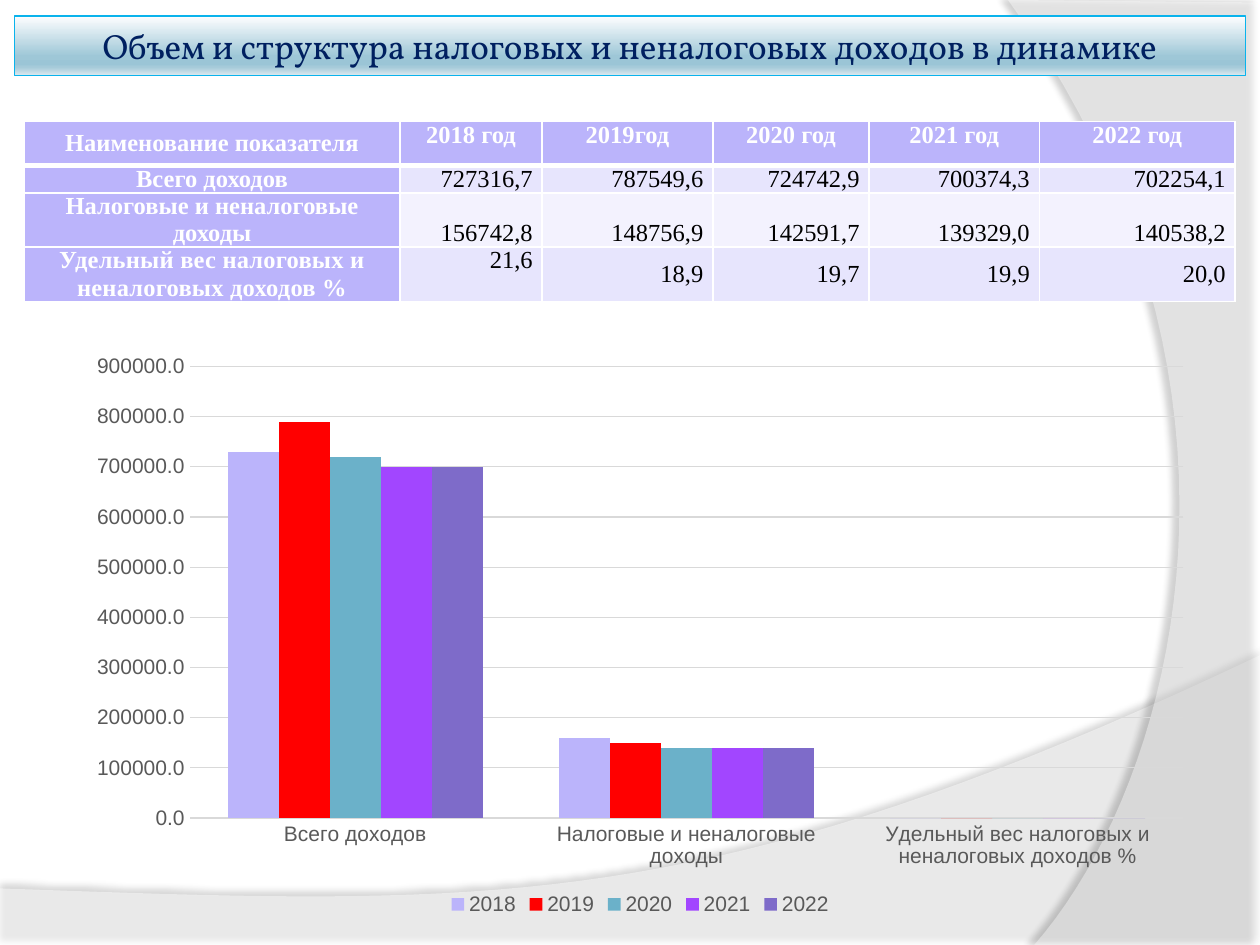
from dataclasses import dataclass

from lxml.etree import SubElement
from pptx import Presentation
from pptx.chart.data import CategoryChartData
from pptx.dml.color import RGBColor
from pptx.enum.chart import XL_CHART_TYPE, XL_LEGEND_POSITION, XL_TICK_MARK
from pptx.enum.text import MSO_ANCHOR, MSO_AUTO_SIZE, PP_ALIGN
from pptx.oxml.ns import qn
from pptx.util import Cm, Pt

COLORS = {
    "white": "FFFFFF", "black": "000000", "navy": "002060", "sky": "0AB3EC",
    "lilac": "BBB4FB", "band": "E7E5FD", "pale": "F3F2FE",
    "label": "595959", "grid": "D9D9D9",
}
TITLE_STOPS = [(0, "FEFEFF"), (68, "9EC7D7"), (81, "9BC5D6"), (86, "A5CAD9"), (100, "DAE8EE")]
SERIES_COLORS = ["BBB4FB", "FF0000", "6BB1C9", "A246FF", "7E6BC9"]
YEARS = ["2018", "2019", "2020", "2021", "2022"]
HEADERS = ["Наименование показателя", "2018 год", "2019год", "2020 год", "2021 год", "2022 год"]
COLUMN_WIDTHS = [7.57, 2.87, 3.44, 3.15, 3.43, 3.95]
ROW_HEIGHTS = [0.89, 0.53, 1.07, 1.08]

Point = tuple[float, float]


@dataclass
class Indicator:
    name: str
    values: list[float]
    fill: str
    first_anchor: MSO_ANCHOR
    anchor: MSO_ANCHOR
    spacing: float = 0


@dataclass
class Swoosh:
    corners: list[Point]
    controls: list[Point]
    opacity: int
    shadow_opacity: int
    shadow_distance: float
    shadow_angle: int


INDICATORS = [
    Indicator("Всего доходов", [727316.7, 787549.6, 724742.9, 700374.3, 702254.1],
              "band", MSO_ANCHOR.TOP, MSO_ANCHOR.MIDDLE),
    Indicator("Налоговые и неналоговые доходы", [156742.8, 148756.9, 142591.7, 139329.0, 140538.2],
              "pale", MSO_ANCHOR.BOTTOM, MSO_ANCHOR.BOTTOM),
    Indicator("Удельный вес налоговых и неналоговых доходов %", [21.6, 18.9, 19.7, 19.9, 20.0],
              "band", MSO_ANCHOR.TOP, MSO_ANCHOR.MIDDLE, 0.1),
]
SWOOSHES = [
    Swoosh([(0, 17.91), (0, 19.08), (25.4, 19.08), (25.4, 13.21)],
           [(14.2, 18.52), (9.93, 18.26), (0, 17.91)], 45, 35, 3.5, 270),
    Swoosh([(25.4, 0.05), (25.4, 19.05), (20.85, 19.05)],
           [(23.75, 15.72), (25.86, 7.62), (20.32, 0)], 40, 45, 4, 180),
]


def rgb(name: str) -> RGBColor:
    return RGBColor.from_string(COLORS.get(name, name))


def set_font(font, *, size: float, color: str, face: str, bold: bool = False) -> None:
    font.size, font.name, font.bold = Pt(size), face, bold
    font.color.rgb = rgb(color)


def write(frame, text: str, *, align: PP_ALIGN = PP_ALIGN.CENTER, size: float = 14,
          color: str = "white", face: str = "Times New Roman", bold: bool = False,
          spacing: float = 0) -> None:
    para = frame.paragraphs[0]
    para.alignment = align
    span = para.add_run()
    span.text = text
    set_font(span.font, size=size, color=color, face=face, bold=bold)
    if spacing:
        span._r.get_or_add_rPr().set("spc", str(round(spacing * 100)))


def curve(start: Point, controls: list[Point], steps: int = 40) -> list[Point]:
    points = [start, *controls]
    weights = [1, 3, 3, 1]
    return [
        tuple(sum(weight * (1 - t) ** (3 - i) * t ** i * point[axis]
                  for i, (weight, point) in enumerate(zip(weights, points)))
              for axis in (0, 1))
        for t in (step / steps for step in range(1, steps + 1))
    ]


def add_alpha(color, percent: int) -> None:
    SubElement(color, qn("a:alpha"), val=str(percent * 1000))


def draw_swoosh(page, swoosh: Swoosh) -> None:
    outline = swoosh.corners + curve(swoosh.corners[-1], swoosh.controls)
    points = [(Cm(x), Cm(y)) for x, y in outline]
    builder = page.shapes.build_freeform(*points[0])
    builder.add_line_segments(points[1:], close=True)
    shape = builder.convert_to_shape()
    shape.fill.solid()
    shape.fill.fore_color.rgb = rgb("white")
    shape.line.fill.background()
    shape.shadow.inherit = False
    properties = shape.element.spPr
    add_alpha(properties.find(qn("a:solidFill")).find(qn("a:srgbClr")), swoosh.opacity)
    shadow = SubElement(properties.find(qn("a:effectLst")), qn("a:outerShdw"),
                        blurRad=str(Pt(4)), dist=str(Pt(swoosh.shadow_distance)),
                        dir=str(swoosh.shadow_angle * 60000), rotWithShape="0")
    add_alpha(SubElement(shadow, qn("a:srgbClr"), val=COLORS["black"]), swoosh.shadow_opacity)


def draw_title(page) -> None:
    title = page.shapes.title
    title.left, title.top, title.width, title.height = Cm(0.29), Cm(0.32), Cm(24.82), Cm(1.2)
    title.fill.gradient()
    title.fill.gradient_angle = 270
    stops = title.element.spPr.find(qn("a:gradFill")).find(qn("a:gsLst"))
    for stop in list(stops):
        stops.remove(stop)
    for position, color in TITLE_STOPS:
        stop = SubElement(stops, qn("a:gs"), pos=str(position * 1000))
        SubElement(stop, qn("a:srgbClr"), val=color)
    title.line.color.rgb = rgb("sky")
    title.line.width = Pt(0.75)
    frame = title.text_frame
    frame.word_wrap = True
    frame.auto_size = MSO_AUTO_SIZE.NONE
    frame.vertical_anchor = MSO_ANCHOR.MIDDLE
    write(frame, "Объем и структура налоговых и неналоговых доходов в динамике",
          size=20, color="navy", face="Vollkorn")
    title.element.getparent().append(title.element)


def fill_cell(cell, text: str, *, fill: str, anchor: MSO_ANCHOR = MSO_ANCHOR.MIDDLE,
              top: float = 1, bottom: float = 1, **text_format) -> None:
    cell.margin_left = cell.margin_right = Cm(0.19)
    cell.margin_top = cell.margin_bottom = 0
    cell.vertical_anchor = anchor
    properties = cell._tc.get_or_add_tcPr()
    for side, width in (("L", 1), ("R", 1), ("T", top), ("B", bottom)):
        border = SubElement(properties, qn(f"a:ln{side}"), w=str(Pt(width)))
        SubElement(SubElement(border, qn("a:solidFill")), qn("a:srgbClr"), val=COLORS["white"])
    cell.fill.solid()
    cell.fill.fore_color.rgb = rgb(fill)
    write(cell.text_frame, text, **text_format)


def draw_table(page) -> None:
    table = page.shapes.add_table(len(ROW_HEIGHTS), len(COLUMN_WIDTHS), Cm(0.49), Cm(2.45),
                                  Cm(sum(COLUMN_WIDTHS)), Cm(sum(ROW_HEIGHTS))).table
    for column, width in zip(table.columns, COLUMN_WIDTHS):
        column.width = Cm(width)
    for row, height in zip(table.rows, ROW_HEIGHTS):
        row.height = Cm(height)
    for index, header in enumerate(HEADERS):
        fill_cell(table.cell(0, index), header, fill="lilac", bottom=3, bold=True,
                  anchor=MSO_ANCHOR.TOP if index else MSO_ANCHOR.MIDDLE)
    for row, indicator in enumerate(INDICATORS, 1):
        top = 3 if row == 1 else 1
        fill_cell(table.cell(row, 0), indicator.name, fill="lilac", top=top, bold=True,
                  spacing=indicator.spacing)
        for column, value in enumerate(indicator.values, 1):
            fill_cell(table.cell(row, column), f"{value:.1f}".replace(".", ","),
                      fill=indicator.fill, top=top, align=PP_ALIGN.RIGHT, color="black",
                      anchor=indicator.first_anchor if column == 1 else indicator.anchor)


def draw_chart(page) -> None:
    data = CategoryChartData(number_format="0.0")
    data.categories = [indicator.name for indicator in INDICATORS]
    for index, year in enumerate(YEARS):
        data.add_series(year, [round(indicator.values[index], -4) for indicator in INDICATORS])
    chart = page.shapes.add_chart(XL_CHART_TYPE.COLUMN_CLUSTERED, Cm(1.5), Cm(6.93),
                                  Cm(22.81), Cm(11.63), data).chart
    chart.has_title = False
    chart.has_legend = True
    chart.legend.position = XL_LEGEND_POSITION.BOTTOM
    chart.legend.include_in_layout = False
    set_font(chart.font, size=10, color="black", face="Arial")
    set_font(chart.legend.font, size=12, color="label", face="Arial")
    for axis in (chart.category_axis, chart.value_axis):
        set_font(axis.tick_labels.font, size=12, color="label", face="Arial")
        axis.major_tick_mark = axis.minor_tick_mark = XL_TICK_MARK.NONE
        axis.format.line.fill.background()
    values = chart.value_axis
    values.minimum_scale = 0
    values.tick_labels.number_format = "0.0"
    values.tick_labels.number_format_is_linked = False
    values.major_gridlines.format.line.color.rgb = rgb("grid")
    values.major_gridlines.format.line.width = Pt(0.75)
    plot = chart.plots[0]
    plot.gap_width, plot.overlap, plot.vary_by_categories = 150, 0, False
    for series, color in zip(plot.series, SERIES_COLORS):
        series.format.fill.solid()
        series.format.fill.fore_color.rgb = rgb(color)


def main() -> None:
    deck = Presentation()
    deck.slide_width, deck.slide_height = Cm(25.4), Cm(19.05)
    page = deck.slides.add_slide(deck.slide_layouts[5])
    for swoosh in SWOOSHES:
        draw_swoosh(page, swoosh)
    draw_title(page)
    draw_table(page)
    draw_chart(page)
    deck.save("out.pptx")


if __name__ == "__main__":
    main()
